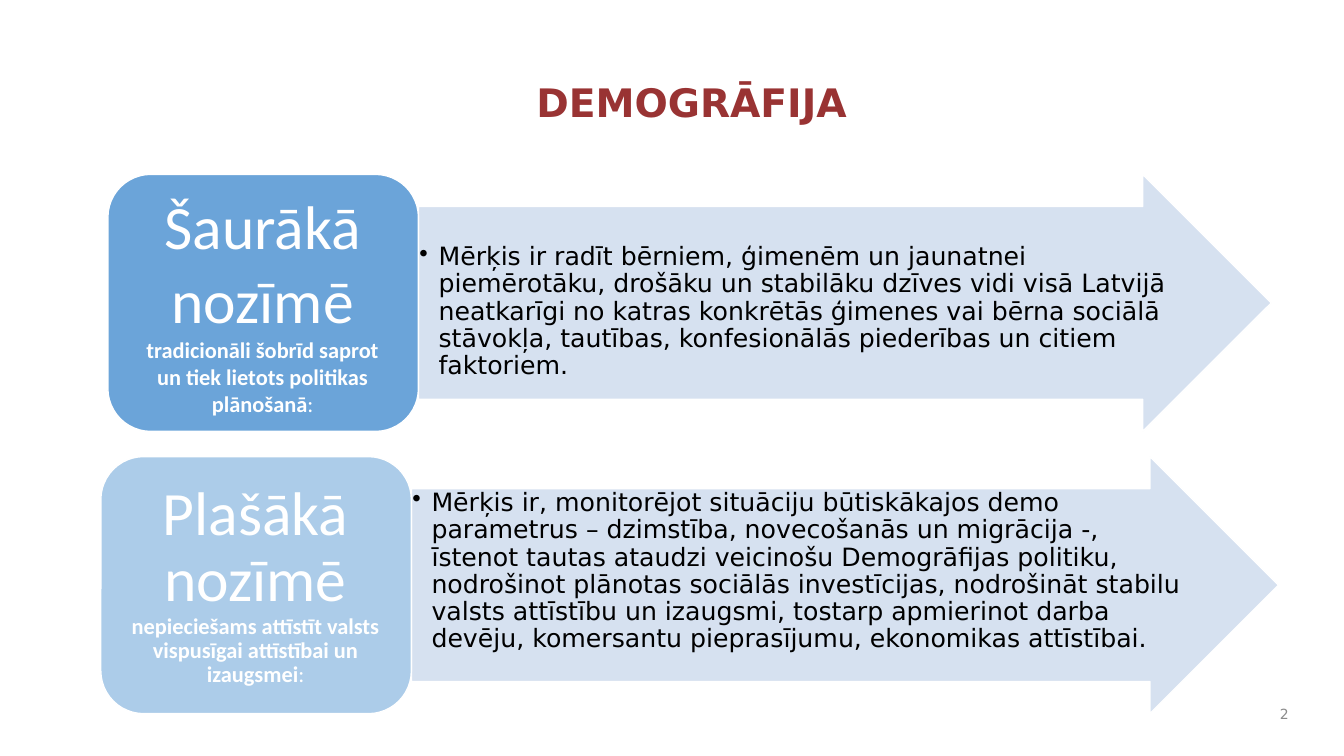
"""Build the slide on the narrow and the broad sense of demography."""
import pptx
import pptx.dml.color
import pptx.enum.shapes
import pptx.enum.text
import pptx.oxml
import pptx.oxml.ns
import pptx.util

PX = 9144
COLOURS = {
    "title": "993333",
    "arrow": "D2DEEF",
    "label": "5B9BD5",
    "white": "FFFFFF",
    "black": "000000",
    "number": "8C8C8C",
}
ALIGN = pptx.enum.text.PP_ALIGN
ANCHOR = pptx.enum.text.MSO_ANCHOR
SHAPE = pptx.enum.shapes.MSO_SHAPE


def fill_text(box, spans, colour, align, anchor, margins, spacing):
    """Write one paragraph of (text, font format) spans and return it."""
    frame = box.text_frame
    left, top, right, bottom = (PX * margin for margin in margins)
    frame_format = {
        "word_wrap": True,
        "auto_size": pptx.enum.text.MSO_AUTO_SIZE.NONE,
        "vertical_anchor": anchor,
        "margin_left": left,
        "margin_top": top,
        "margin_right": right,
        "margin_bottom": bottom,
    }
    for name, value in frame_format.items():
        setattr(frame, name, value)
    para = frame.paragraphs[0]
    para.alignment = align
    para.line_spacing = spacing
    for text, font_format in spans:
        span = para.add_run()
        span.text = text
        for name, value in font_format.items():
            setattr(span.font, name, value)
        span.font.color.rgb = pptx.dml.color.RGBColor.from_string(COLOURS[colour])
    return para


def add_panel(page, kind, place, colour, opacity):
    """Add a translucent shape with a white outline."""
    panel = page.shapes.add_shape(kind, *(PX * length for length in place))
    panel.shadow.inherit = False
    panel.fill.solid()
    panel.fill.fore_color.rgb = pptx.dml.color.RGBColor.from_string(COLOURS[colour])
    panel.line.color.rgb = pptx.dml.color.RGBColor.from_string(COLOURS["white"])
    panel.line.width = pptx.util.Pt(1)
    alpha = pptx.oxml.parse_xml(
        f'<a:alpha {pptx.oxml.ns.nsdecls("a")} val="{opacity * 1000}"/>'
    )
    panel.fill._xPr.find(".//" + pptx.oxml.ns.qn("a:srgbClr")).append(alpha)
    return panel


deck = pptx.Presentation()
deck.slide_width = PX * 1333
deck.slide_height = PX * 750
page = deck.slides.add_slide(deck.slide_layouts[5])

title = page.shapes.title
title_place = {"left": 522, "top": 78, "width": 401, "height": 127}
for name, value in title_place.items():
    setattr(title, name, PX * value)
title_font = {"name": "DejaVu Sans", "size": pptx.util.Pt(28), "bold": True}
fill_text(title, [("DEMOGRĀFIJA", title_font)], "title", ALIGN.LEFT, ANCHOR.TOP,
          (10, 5, 10, 5), 0.9)

heading_font = {"name": "Calibri", "size": pptx.util.Pt(44), "bold": False}
detail_font = {"name": "Calibri", "size": pptx.util.Pt(16), "bold": True}
colon_font = {**detail_font, "bold": False}
body_font = {"name": "DejaVu Sans", "size": pptx.util.Pt(18)}

LABEL_WIDTH, ROW_HEIGHT = 308, 255
rows = [
    {
        "left": 107, "top": 173, "arrow_width": 846, "text_width": 751,
        "opacity": 90, "label_spacing": 1.0, "text_margin": 37,
        "heading": "Šaurākā nozīmē ",
        "detail": "tradicionāli šobrīd saprot un tiek lietots politikas plānošanā",
        "aim": "Mērķis ir radīt bērniem, ģimenēm un jaunatnei piemērotāku, "
               "drošāku un stabilāku dzīves vidi visā Latvijā neatkarīgi no "
               "katras konkrētās ģimenes vai bērna sociālā stāvokļa, tautības, "
               "konfesionālās piederības un citiem faktoriem.",
    },
    {
        "left": 100, "top": 453, "arrow_width": 860, "text_width": 765,
        "opacity": 50, "label_spacing": 0.9, "text_margin": 1,
        "heading": "Plašākā nozīmē ",
        "detail": "nepieciešams attīstīt valsts vispusīgai attīstībai un izaugsmei",
        "aim": "Mērķis ir, monitorējot situāciju būtiskākajos demo parametrus – "
               "dzimstība, novecošanās un migrācija -, īstenot tautas ataudzi "
               "veicinošu Demogrāfijas politiku, nodrošinot plānotas sociālās "
               "investīcijas, nodrošināt stabilu valsts attīstību un izaugsmi, "
               "tostarp apmierinot darba devēju, komersantu pieprasījumu, "
               "ekonomikas attīstībai.",
    },
]

for row in rows:
    left, top = row["left"], row["top"]
    arrow_left = left + LABEL_WIDTH
    arrow = add_panel(page, SHAPE.RIGHT_ARROW,
                      (arrow_left, top, row["arrow_width"], ROW_HEIGHT), "arrow", 90)
    arrow.adjustments[0] = 0.75
    arrow.adjustments[1] = 0.5

    aim_box = page.shapes.add_textbox(PX * arrow_left, PX * (top + 32),
                                      PX * row["text_width"], PX * 191)
    aim = fill_text(aim_box, [(row["aim"], body_font)], "black", ALIGN.LEFT,
                    ANCHOR.TOP, (1, row["text_margin"], 1, 1), 0.9)
    aim_properties = aim._p.get_or_add_pPr()
    aim_properties.set("marL", str(PX * 19))
    aim_properties.set("indent", str(PX * -19))
    aim_properties.append(pptx.oxml.parse_xml(
        f'<a:buChar {pptx.oxml.ns.nsdecls("a")} char="•"/>'
    ))

    add_panel(page, SHAPE.ROUNDED_RECTANGLE, (left, top, LABEL_WIDTH, ROW_HEIGHT),
              "label", row["opacity"])
    label_box = page.shapes.add_textbox(PX * (left + 12), PX * (top + 12),
                                        PX * 283, PX * 230)
    label_spans = [(row["heading"], heading_font), (row["detail"], detail_font),
                   (":", colon_font)]
    fill_text(label_box, label_spans, "white", ALIGN.CENTER, ANCHOR.MIDDLE,
              (18, 9, 18, 9), row["label_spacing"])

number_box = page.shapes.add_textbox(PX * 1244, PX * 692, PX * 44, PX * 33)
number_font = {"name": "DejaVu Sans", "size": pptx.util.Pt(10)}
fill_text(number_box, [("2", number_font)], "number", ALIGN.RIGHT, ANCHOR.MIDDLE,
          (10, 5, 10, 5), 1.0)

deck.save("out.pptx")
